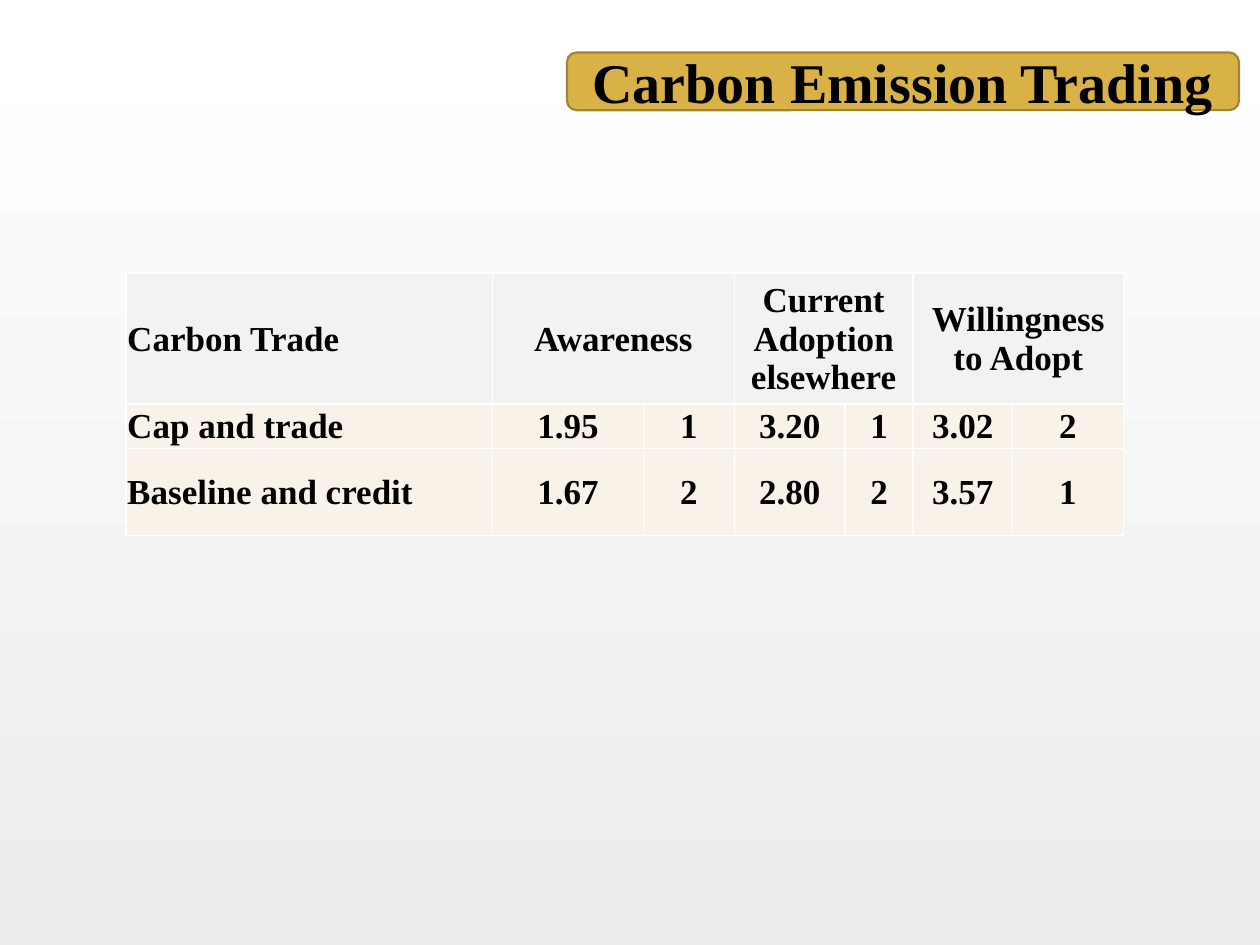
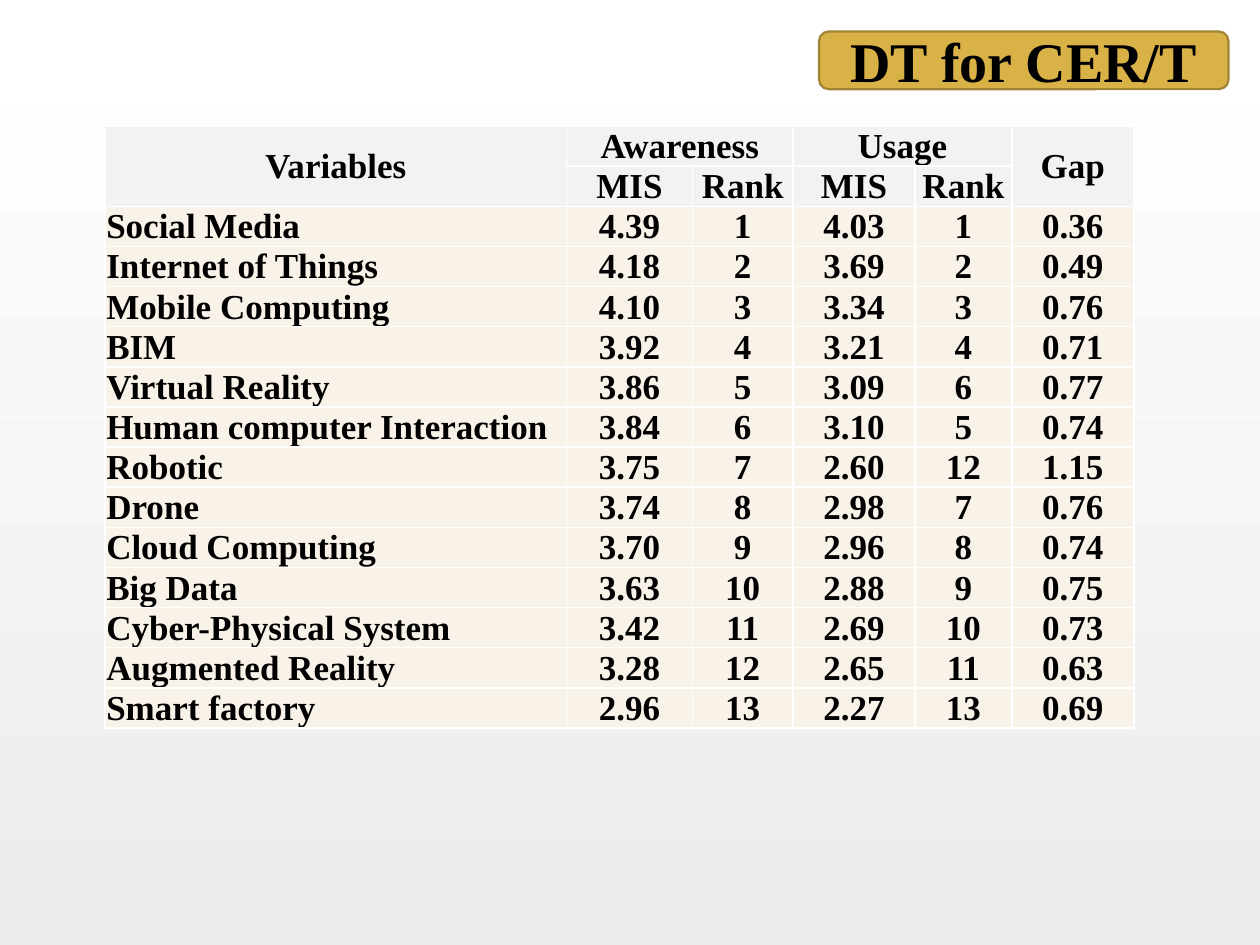
from lxml import etree
from pptx import Presentation
from pptx import util as u
from pptx.dml.color import RGBColor
from pptx.enum import shapes, text
from pptx.oxml import ns

FONT = "Times New Roman"
BLACK = RGBColor(0x00, 0x00, 0x00)
WHITE = RGBColor(0xFF, 0xFF, 0xFF)
PALE_GREY = RGBColor(0xEC, 0xEC, 0xEC)
GOLD = RGBColor(0xD9, 0xB2, 0x47)
DARK_GOLD = RGBColor(0xA1, 0x84, 0x35)
HEADER_GREY = RGBColor(0xF2, 0xF2, 0xF2)
CREAM = RGBColor(0xF8, 0xF2, 0xE9)

# The page is a grid of 120 columns by 90 rows; boxes are (col, row, cols, rows).
CELL = u.Inches(10) // 120
LEFT, CENTER = text.PP_ALIGN.LEFT, text.PP_ALIGN.CENTER
MIDDLE, BOTTOM = text.MSO_ANCHOR.MIDDLE, text.MSO_ANCHOR.BOTTOM

TRADE_ROWS = [
    ["Carbon Trade", "Awareness", "", "Current Adoption elsewhere", "",
     "Willingness to Adopt", ""],
    ["Cap and trade", "1.95", "1", "3.20", "1", "3.02", "2"],
    ["Baseline and credit", "1.67", "2", "2.80", "2", "3.57", "1"],
]
TECHNOLOGY_ROWS = [
    ["Variables", "Awareness", "", "Usage", "", "Gap"],
    ["", "MIS", "Rank", "MIS", "Rank", ""],
    ["Social Media", "4.39", "1", "4.03", "1", "0.36"],
    ["Internet of Things", "4.18", "2", "3.69", "2", "0.49"],
    ["Mobile Computing", "4.10", "3", "3.34", "3", "0.76"],
    ["BIM", "3.92", "4", "3.21", "4", "0.71"],
    ["Virtual Reality", "3.86", "5", "3.09", "6", "0.77"],
    ["Human computer Interaction", "3.84", "6", "3.10", "5", "0.74"],
    ["Robotic", "3.75", "7", "2.60", "12", "1.15"],
    ["Drone", "3.74", "8", "2.98", "7", "0.76"],
    ["Cloud Computing", "3.70", "9", "2.96", "8", "0.74"],
    ["Big Data", "3.63", "10", "2.88", "9", "0.75"],
    ["Cyber-Physical System", "3.42", "11", "2.69", "10", "0.73"],
    ["Augmented Reality", "3.28", "12", "2.65", "11", "0.63"],
    ["Smart factory", "2.96", "13", "2.27", "13", "0.69"],
]


def on_grid(box):
    return [u.Emu(round(n * CELL)) for n in box]


def style_text(p, size, align):
    p.alignment = align
    p.font.name, p.font.size, p.font.bold = FONT, u.Pt(size), True
    p.font.color.rgb = BLACK


def add_slide(prs):
    """Add a blank slide with the shared white-to-grey background."""
    slide = prs.slides.add_slide(prs.slide_layouts[6])
    fill = slide.background.fill
    fill.gradient()
    fill.gradient_angle = 270
    for stop, color in zip(fill.gradient_stops, (WHITE, PALE_GREY)):
        stop.color.rgb = color
    return slide


def add_title_badge(slide, box, title):
    sp = slide.shapes.add_shape(shapes.MSO_SHAPE.ROUNDED_RECTANGLE, *on_grid(box))
    sp.shadow.inherit = False
    sp.fill.solid()
    sp.fill.fore_color.rgb = GOLD
    sp.line.color.rgb = DARK_GOLD
    sp.line.width = u.Pt(1.25)
    tf = sp.text_frame
    tf.word_wrap = True
    tf.vertical_anchor = MIDDLE
    tf.text = title
    style_text(tf.paragraphs[0], 32, CENTER)


def add_borders(cell):
    tc_pr = cell._tc.get_or_add_tcPr()
    for side in ("a:lnL", "a:lnR", "a:lnT", "a:lnB"):
        ln = etree.SubElement(tc_pr, ns.qn(side), w=str(u.Pt(1)))
        fill = etree.SubElement(ln, ns.qn("a:solidFill"))
        etree.SubElement(fill, ns.qn("a:srgbClr"), val=str(WHITE))


def style_cell(cell, color, anchor, align):
    add_borders(cell)
    cell.fill.solid()
    cell.fill.fore_color.rgb = color
    cell.vertical_anchor = anchor
    cell.margin_left = cell.margin_right = cell.margin_top = u.Inches(0.01)
    cell.margin_bottom = 0
    style_text(cell.text_frame.paragraphs[0], 20, align)


def share_out(lines, total, weights):
    """Size columns or rows in proportion to their weights."""
    for line, weight in zip(lines, weights):
        size = u.Emu(round(total * weight / sum(weights)))
        if hasattr(line, "width"):
            line.width = size
        else:
            line.height = size


def add_score_table(slide, box, rows, col_weights, row_weights, spans,
                    header_rows=1, anchor=MIDDLE, corner_align=LEFT):
    """Add a table; spans lists merged ranges as (row, col, last row, last col)."""
    x, y, w, h = on_grid(box)
    table = slide.shapes.add_table(len(rows), len(rows[0]), x, y, w, h).table
    table.first_row = table.horz_banding = False
    share_out(table.columns, w, col_weights)
    share_out(table.rows, h, row_weights)
    for r, row in enumerate(rows):
        for c, value in enumerate(row):
            cell = table.cell(r, c)
            cell.text = value
            align = CENTER if c else LEFT if r else corner_align
            style_cell(cell, HEADER_GREY if r < header_rows else CREAM, anchor, align)
    for top, left, bottom, right in spans:
        first = table.cell(top, left)
        first.merge(table.cell(bottom, right))
        if bottom > top:
            first.vertical_anchor = MIDDLE


def carbon_trading_slide(prs):
    slide = add_slide(prs)
    add_title_badge(slide, (54, 5, 64, 5.5), "Carbon Emission Trading")
    add_score_table(slide, (12, 26, 95, 25), TRADE_ROWS,
                    (2.91, 1.2, 0.72, 0.88, 0.54, 0.79, 0.88), (1.04, 0.35, 0.69),
                    spans=[(0, c, 0, c + 1) for c in (1, 3, 5)])


def digital_technology_slide(prs):
    slide = add_slide(prs)
    add_score_table(slide, (10, 12, 98, 57.3), TECHNOLOGY_ROWS,
                    (3.67, 1, 0.8, 0.97, 0.77, 0.97), [1] * len(TECHNOLOGY_ROWS),
                    spans=[(0, 0, 1, 0), (0, 1, 0, 2), (0, 3, 0, 4), (0, 5, 1, 5)],
                    header_rows=2, anchor=BOTTOM, corner_align=CENTER)
    add_title_badge(slide, (78, 3, 39, 5.5), "DT for CER/T")


def main():
    prs = Presentation()
    prs.slide_width, prs.slide_height = 120 * CELL, 90 * CELL
    carbon_trading_slide(prs)
    digital_technology_slide(prs)
    prs.save("out.pptx")


if __name__ == "__main__":
    main()
